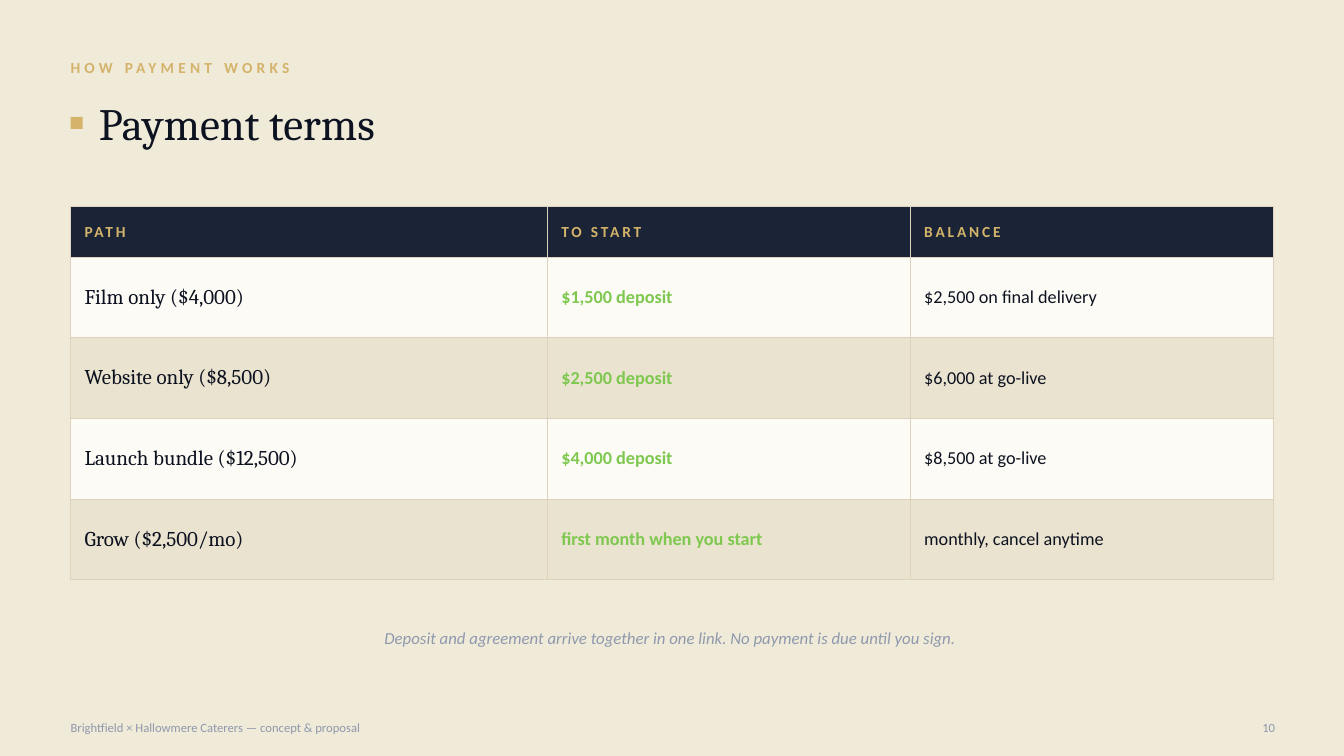
import pptx
import pptx.dml.color
import pptx.enum.shapes
import pptx.enum.text
import pptx.util
from lxml import etree

Pt = pptx.util.Pt
ALIGN = pptx.enum.text.PP_ALIGN
MIDDLE = pptx.enum.text.MSO_ANCHOR.MIDDLE
DRAWING = "{http://schemas.openxmlformats.org/drawingml/2006/main}"

COLORS = {
    "page": "F0EAD9",
    "gold": "D4B36A",
    "ink": "0D1220",
    "navy": "1B2436",
    "cream": "FDFBF5",
    "sand": "EAE3CF",
    "border": "DDD3BC",
    "green": "7EC850",
    "muted": "8F99AD",
}


def color(name):
    return pptx.dml.color.RGBColor.from_string(COLORS[name])


def write(frame, text, size, ink, face="Calibri", bold=False, italic=False,
          spacing=0, align=ALIGN.LEFT):
    """Fill a text frame with one formatted line; spacing is in points."""
    frame.text = text
    frame.word_wrap = True
    frame.vertical_anchor = MIDDLE
    line = frame.paragraphs[0]
    line.alignment = align
    run = line.runs[0]
    run.font.name = face
    run.font.size = Pt(size)
    run.font.bold = bold
    run.font.italic = italic
    run.font.color.rgb = color(ink)
    if spacing:
        run.font._element.set("spc", str(spacing * 100))


deck = pptx.Presentation()
deck.slide_width, deck.slide_height = Pt(960), Pt(540)
slide = deck.slides.add_slide(deck.slide_layouts[5])
slide.background.fill.solid()
slide.background.fill.fore_color.rgb = color("page")

# Title with its square marker
title = slide.shapes.title
title.left, title.top, title.width, title.height = Pt(70.6), Pt(62.6), Pt(835), Pt(50.4)
write(title.text_frame, "Payment terms", 32, "ink", face="Cambria")
title.text_frame.auto_size = pptx.enum.text.MSO_AUTO_SIZE.NONE

marker = slide.shapes.add_shape(
    pptx.enum.shapes.MSO_SHAPE.RECTANGLE, Pt(50.4), Pt(83.5), Pt(8.6), Pt(8.6))
marker.shadow.inherit = False
marker.fill.solid()
marker.fill.fore_color.rgb = color("gold")
marker.line.fill.background()

# Kicker, note and footer lines
lines = [
    ("HOW PAYMENT WORKS", (50.4, 37.4, 856.8, 21.6),
     dict(size=11, ink="gold", bold=True, spacing=3)),
    ("Deposit and agreement arrive together in one link. No payment is due until you sign.",
     (50.4, 442.8, 856.8, 25.2),
     dict(size=12, ink="muted", italic=True, align=ALIGN.CENTER)),
    ("Brightfield × Hallowmere Caterers — concept & proposal", (50.4, 509.8, 468, 20.2),
     dict(size=9, ink="muted")),
    ("10", (878.4, 509.8, 32.4, 20.2),
     dict(size=9, ink="muted", align=ALIGN.RIGHT)),
]
frames = [title.text_frame]
for text, place, style in lines:
    box = slide.shapes.add_textbox(*[Pt(length) for length in place])
    write(box.text_frame, text, **style)
    frames.append(box.text_frame)
for frame in frames:
    frame.margin_left = frame.margin_right = frame.margin_top = frame.margin_bottom = 0

# Payment table
terms = [
    ("PATH", "TO START", "BALANCE"),
    ("Film only ($4,000)", "$1,500 deposit", "$2,500 on final delivery"),
    ("Website only ($8,500)", "$2,500 deposit", "$6,000 at go-live"),
    ("Launch bundle ($12,500)", "$4,000 deposit", "$8,500 at go-live"),
    ("Grow ($2,500/mo)", "first month when you start", "monthly, cancel anytime"),
]
header_style = dict(size=11, ink="gold", bold=True, spacing=2)
column_styles = [
    dict(size=15, ink="ink", face="Cambria"),
    dict(size=13, ink="green", bold=True),
    dict(size=13, ink="ink"),
]
column_widths = [340.6, 259.2, 259.2]
header_height, row_height = 36, 57.6

table = slide.shapes.add_table(
    len(terms), len(column_widths), Pt(50.4), Pt(147.6), Pt(sum(column_widths)),
    Pt(header_height + row_height * (len(terms) - 1))).table
for column, width in zip(table.columns, column_widths):
    column.width = Pt(width)

for r, entries in enumerate(terms):
    table.rows[r].height = Pt(row_height if r else header_height)
    row_fill = ("sand", "cream")[r % 2] if r else "navy"
    for c, entry in enumerate(entries):
        cell = table.cell(r, c)
        write(cell.text_frame, entry, **(column_styles[c] if r else header_style))
        cell.vertical_anchor = MIDDLE
        cell.margin_left = cell.margin_right = Pt(10)
        cell.margin_top = cell.margin_bottom = Pt(10)
        # Borders come before the fill in the cell properties
        properties = cell._tc.get_or_add_tcPr()
        for side in ("lnL", "lnR", "lnT", "lnB"):
            edge = etree.SubElement(properties, DRAWING + side, w=str(Pt(0.75)))
            paint = etree.SubElement(edge, DRAWING + "solidFill")
            etree.SubElement(paint, DRAWING + "srgbClr", val=COLORS["border"])
        cell.fill.solid()
        cell.fill.fore_color.rgb = color(row_fill)

deck.save("out.pptx")
